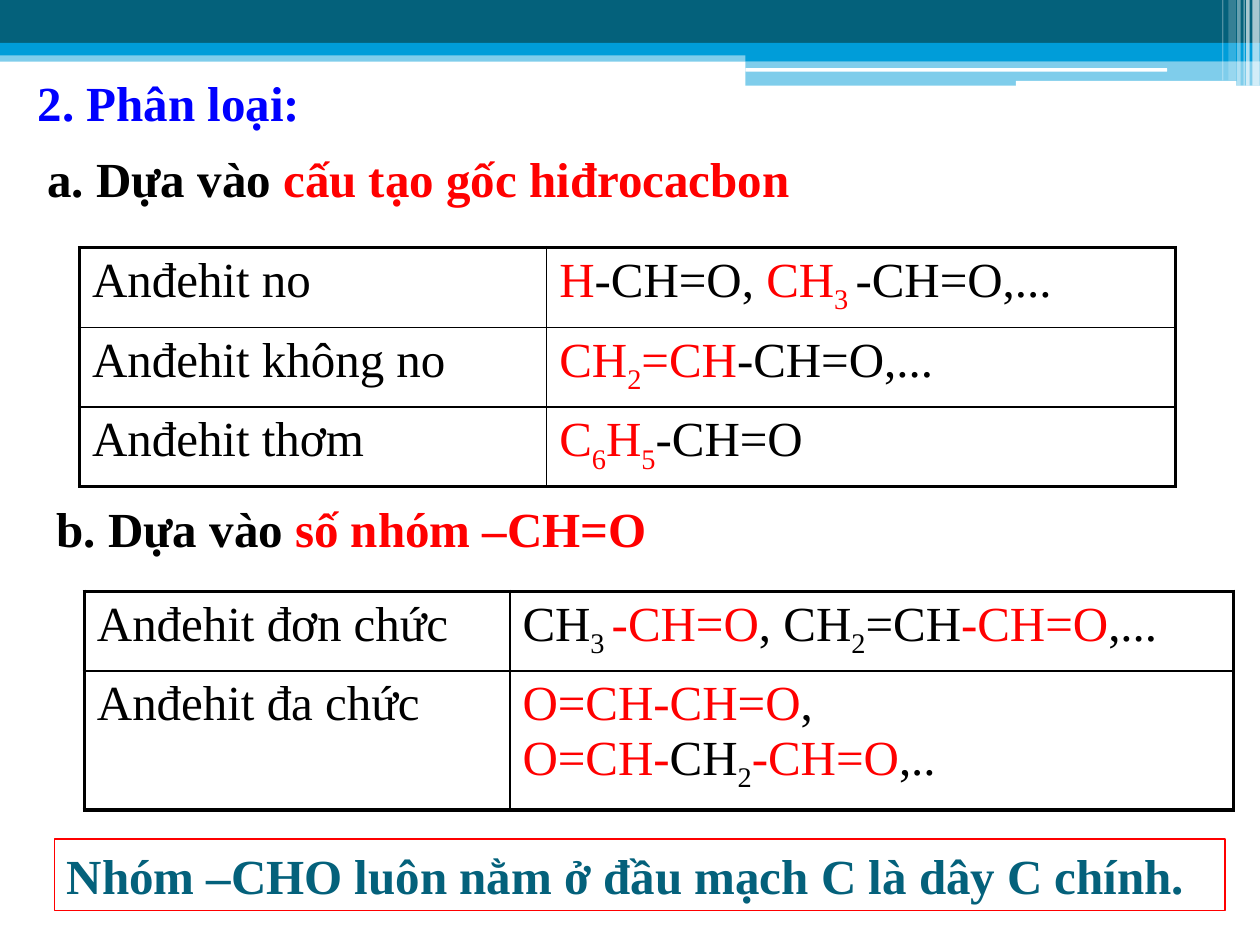
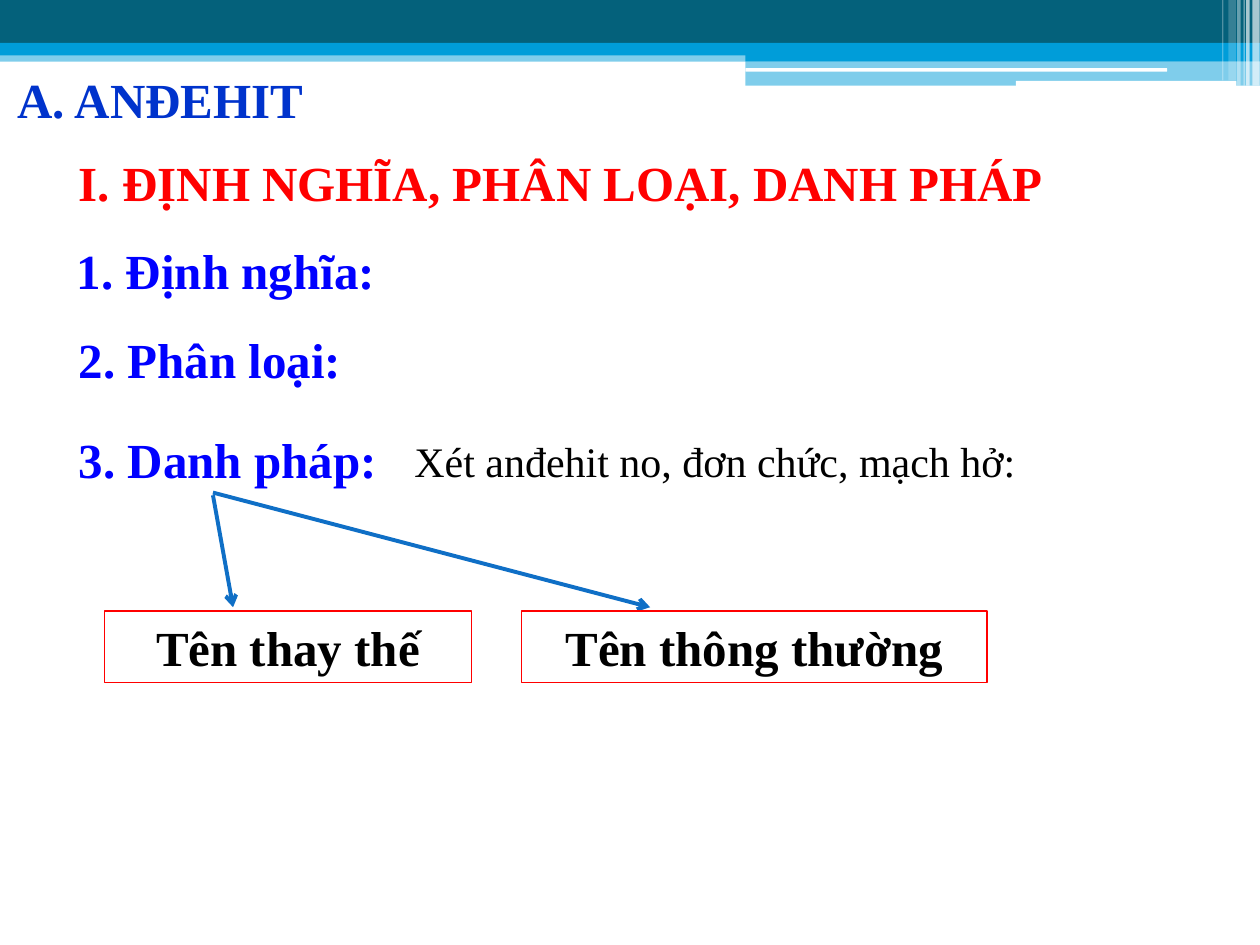
from typing import NamedTuple

from lxml.etree import SubElement
from pptx import Presentation
from pptx.dml.color import RGBColor
from pptx.enum.shapes import MSO_CONNECTOR, MSO_SHAPE
from pptx.enum.text import MSO_ANCHOR, MSO_AUTO_SIZE, PP_ALIGN
from pptx.oxml.ns import qn
from pptx.util import Pt

BLACK = RGBColor(0x00, 0x00, 0x00)
WHITE = RGBColor(0xFF, 0xFF, 0xFF)
RED = RGBColor(0xFF, 0x00, 0x00)
HEADING_BLUE = RGBColor(0x00, 0x00, 0xFF)
CHAPTER_BLUE = RGBColor(0x00, 0x33, 0xCC)
ARROW_BLUE = RGBColor(0x0F, 0x6F, 0xC6)
TEAL = RGBColor(0x04, 0x61, 0x7B)
SKY = RGBColor(0x00, 0x9D, 0xD9)

FONT = "Times New Roman"
TEXT_SIZE = 28
LINE_HEIGHT = 41
OUTER_BORDER, INNER_BORDER = 2.25, 1


class Box(NamedTuple):
    left: float
    top: float
    width: float
    height: float

    def lengths(self):
        return [Pt(value) for value in self]


BAND_BOX = Box(0, 0, 720, 49)


def add_runs(paragraph, runs, bold=False, size=TEXT_SIZE):
    """Parts between underscores are set as subscripts."""
    for color, text in runs:
        for index, piece in enumerate(text.split("_")):
            if not piece:
                continue
            run = paragraph.add_run()
            run.text = piece
            font = run.font
            font.name, font.size, font.bold = FONT, Pt(size), bold
            font.color.rgb = color
            if index % 2:
                font._element.set("baseline", "-25000")


def format_frame(frame):
    frame.word_wrap = True
    frame.auto_size = MSO_AUTO_SIZE.NONE
    frame.vertical_anchor = MSO_ANCHOR.TOP
    frame.margin_left = frame.margin_right = Pt(7.2)
    frame.margin_top = frame.margin_bottom = Pt(3.6)


def add_block(slide, box, color, opacity=100, kind=MSO_SHAPE.RECTANGLE):
    shape = slide.shapes.add_shape(kind, *box.lengths())
    shape.shadow.inherit = False
    shape.line.fill.background()
    shape.fill.solid()
    shape.fill.fore_color.rgb = color
    if opacity < 100:
        fill_color = shape._element.spPr.find(qn("a:solidFill"))[0]
        SubElement(fill_color, qn("a:alpha"), val=str(opacity * 1000))


def add_band(slide, box):
    left, top, width, height = box
    right = left + width
    step = left + 426
    add_block(slide, Box(left, top + 28.8, width, 6.5), SKY, 50)
    add_block(slide, Box(left, top, width, 24.5), TEAL)
    add_block(slide, Box(left, top + 24.5, width, 7.2), SKY)
    add_block(slide, Box(step, top + 28, right - step, 6.9), SKY)
    add_block(slide, Box(step, top + 34.9, right - step, height - 34.9), SKY, 50)
    for x, y, length, thickness in ((step, 38.9, 241, 2), (left + 580.5, 46.2, 126, 3)):
        add_block(slide, Box(x, top + y, length, thickness), WHITE,
                  kind=MSO_SHAPE.ROUNDED_RECTANGLE)
    for inset, stripe_width, stripe_height, opacity in (
        (4.3, 4.1, height, 65),
        (7.9, 2, height, 65),
        (9.4, 0.7, height, 60),
        (13, 2, height, 40),
        (18, 4.3, 46, 20),
        (21.6, 0.7, 46, 30),
    ):
        add_block(slide, Box(right - inset, top, stripe_width, stripe_height), WHITE, opacity)


def set_title(slide, box, lines, indent=0):
    title = slide.shapes.title
    title.left, title.top, title.width, title.height = box.lengths()
    frame = title.text_frame
    format_frame(frame)
    for index, line in enumerate(lines):
        paragraph = frame.add_paragraph() if index else frame.paragraphs[0]
        paragraph.alignment = PP_ALIGN.LEFT
        if index:
            paragraph.space_before = Pt(TEXT_SIZE / 2)
            paragraph._p.get_or_add_pPr().set("marL", str(Pt(indent)))
        add_runs(paragraph, [line], bold=True)


def add_text(slide, box, runs, bold=True, size=TEXT_SIZE):
    frame = slide.shapes.add_textbox(*box.lengths()).text_frame
    format_frame(frame)
    add_runs(frame.paragraphs[0], runs, bold, size)


def add_framed_text(slide, box, color, text, alignment):
    shape = slide.shapes.add_shape(MSO_SHAPE.RECTANGLE, *box.lengths())
    shape.shadow.inherit = False
    shape.fill.background()
    shape.line.color.rgb = RED
    shape.line.width = Pt(0.75)
    format_frame(shape.text_frame)
    paragraph = shape.text_frame.paragraphs[0]
    paragraph.alignment = alignment
    add_runs(paragraph, [(color, text)], bold=True)


def add_arrow(slide, start, end):
    points = [Pt(value) for value in (*start, *end)]
    connector = slide.shapes.add_connector(MSO_CONNECTOR.STRAIGHT, *points)
    connector.line.color.rgb = ARROW_BLUE
    connector.line.width = Pt(2.25)
    SubElement(connector.line._get_or_add_ln(), qn("a:tailEnd"), type="arrow")
    SubElement(connector._element.spPr, qn("a:effectLst"))


def set_borders(cell, **on_edge):
    properties = cell._tc.get_or_add_tcPr()
    for side in "LRTB":
        width = OUTER_BORDER if on_edge[side] else INNER_BORDER
        line = SubElement(properties, qn(f"a:ln{side}"), w=str(Pt(width)))
        fill = SubElement(line, qn("a:solidFill"))
        SubElement(fill, qn("a:srgbClr"), val=str(BLACK))


def add_class_table(slide, box, name_width, row_heights, rows):
    table = slide.shapes.add_table(len(rows), 2, *box.lengths()).table
    table.first_row = table.horz_banding = False
    table.columns[0].width = Pt(name_width)
    table.columns[1].width = Pt(box.width - name_width)
    last = len(rows) - 1
    for row, (name, *formula_lines) in enumerate(rows):
        table.rows[row].height = Pt(row_heights[row])
        for column, lines in enumerate(([[(BLACK, name)]], formula_lines)):
            cell = table.cell(row, column)
            set_borders(cell, L=column == 0, R=column == 1, T=row == 0, B=row == last)
            cell.fill.background()
            paragraph = cell.text_frame.paragraphs[0]
            for index, runs in enumerate(lines):
                if index:
                    paragraph.add_line_break()
                add_runs(paragraph, runs)


def start_slide(presentation):
    slide = presentation.slides.add_slide(presentation.slide_layouts[5])
    add_band(slide, BAND_BOX)
    return slide


def build_classification(presentation):
    slide = start_slide(presentation)
    set_title(slide, Box(14.4, 37.6, 420, LINE_HEIGHT), [(HEADING_BLUE, "2. Phân loại:")])
    add_text(slide, Box(20, 81.5, 556, LINE_HEIGHT),
             [(BLACK, "a. Dựa vào "), (RED, "cấu tạo gốc hiđrocacbon")])
    add_class_table(slide, Box(45.4, 141.5, 626.4, 136.5), 267, [45.5] * 3, [
        ("Anđehit no",
         [(RED, "H"), (BLACK, "-CH=O, "), (RED, "CH_3 _"), (BLACK, "-CH=O,...")]),
        ("Anđehit không no",
         [(RED, "CH_2_=CH"), (BLACK, "-CH=O,...")]),
        ("Anđehit thơm",
         [(RED, "C_6_H_5_"), (BLACK, "-CH=O")]),
    ])
    add_text(slide, Box(25.2, 281.5, 533, LINE_HEIGHT),
             [(BLACK, "b. Dựa vào "), (RED, "số nhóm –CH=O")])
    add_class_table(slide, Box(48.2, 337.9, 656.6, 125), 243.2, [45.5, 79.5], [
        ("Anđehit đơn chức",
         [(BLACK, "CH_3 _"), (RED, "-CH=O"), (BLACK, ", CH_2_=CH"),
          (RED, "-CH=O"), (BLACK, ",...")]),
        ("Anđehit đa chức",
         [(RED, "O=CH-CH=O"), (BLACK, ",")],
         [(RED, "O=CH-"), (BLACK, "CH_2_"), (RED, "-CH=O"), (BLACK, ",..")]),
    ])
    add_framed_text(slide, Box(31, 479.5, 669, LINE_HEIGHT), TEAL,
                    "Nhóm –CHO luôn nằm ở đầu mạch C là dây C chính.", PP_ALIGN.LEFT)


def build_naming(presentation):
    slide = start_slide(presentation)
    set_title(slide, Box(2.9, 36, 675, 92), [
        (CHAPTER_BLUE, "A. ANĐEHIT"),
        (RED, "I. ĐỊNH NGHĨA, PHÂN LOẠI, DANH PHÁP"),
    ], indent=35)
    for left, top, heading in (
        (36.9, 134, "1. Định nghĩa:"),
        (38, 185, "2. Phân loại:"),
        (38, 242, "3. Danh pháp:"),
    ):
        add_text(slide, Box(left, top, 420, LINE_HEIGHT), [(HEADING_BLUE, heading)])
    add_text(slide, Box(229.7, 245.5, 392, 36),
             [(BLACK, "Xét anđehit no, đơn chức, mạch hở:")], bold=False, size=24)
    add_arrow(slide, (121.7, 283), (133.2, 347))
    add_arrow(slide, (121.7, 281.5), (371.5, 347))
    for left, width, name in ((59.8, 209.5, "Tên thay thế"), (298, 266, "Tên thông thường")):
        add_framed_text(slide, Box(left, 349.2, width, LINE_HEIGHT), BLACK, name,
                        PP_ALIGN.CENTER)


def main():
    presentation = Presentation()
    presentation.slide_width, presentation.slide_height = Pt(720), Pt(540)
    build_classification(presentation)
    build_naming(presentation)
    presentation.save("out.pptx")


if __name__ == "__main__":
    main()
